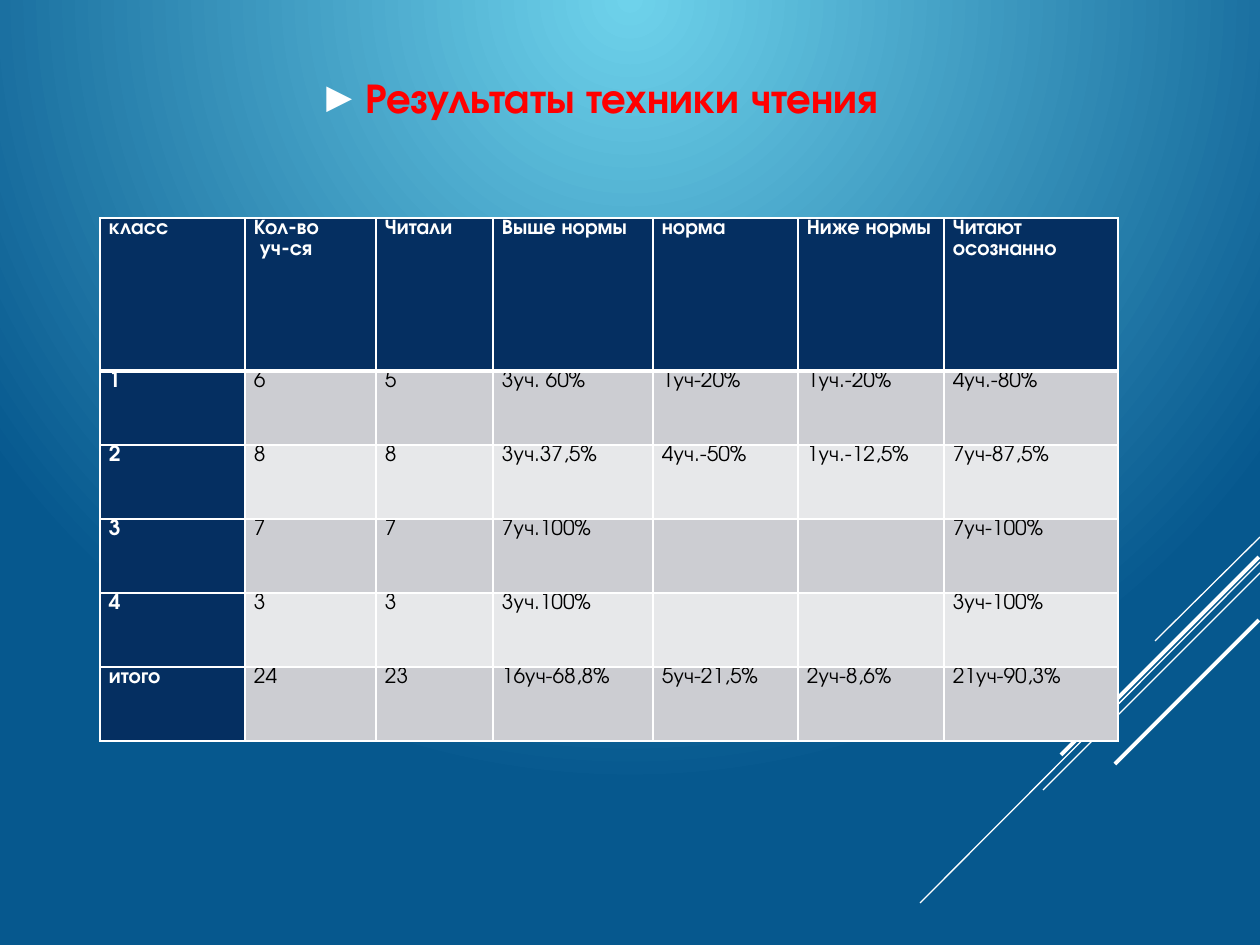
from typing import NamedTuple

from lxml.etree import SubElement
from pptx import Presentation
from pptx.dml.color import RGBColor
from pptx.enum.shapes import MSO_CONNECTOR
from pptx.enum.text import MSO_ANCHOR, PP_ALIGN
from pptx.oxml.ns import qn
from pptx.util import Emu, Pt

FONT = "TeX Gyre Adventor"
WHITE = RGBColor(0xFF, 0xFF, 0xFF)
BLACK = RGBColor(0x00, 0x00, 0x00)
RED = RGBColor(0xFF, 0x00, 0x00)
NAVY = RGBColor(0x05, 0x2F, 0x61)
GREY = RGBColor(0xCC, 0xCD, 0xD2)
PALE = RGBColor(0xE7, 0xE8, 0xEA)
SKY = RGBColor(0x6E, 0xD2, 0xEB)
BLUE = RGBColor(0x06, 0x58, 0x8E)


class Stripe(NamedTuple):
    right: int
    top: int
    left: int
    bottom: int
    weight: float


STRIPES = [
    Stripe(1260, 537, 1155, 641, 0.75),
    Stripe(1260, 562, 920, 903, 0.75),
    Stripe(1260, 573, 1043, 790, 0.75),
    Stripe(1259, 557, 1061, 755, 2.25),
    Stripe(1259, 620, 1115, 764, 2.25),
]

WIDTHS = [145, 131, 117, 160, 145, 146, 174]
HEIGHTS = [153] + [74] * 5
ROWS = [
    ["класс", "Кол-во\n уч-ся", "Читали", "Выше нормы", "норма", "Ниже нормы", "Читают осознанно"],
    ["1", "6", "5", "3уч. 60%", "1уч-20%", "1уч.-20%", "4уч.-80%"],
    ["2", "8", "8", "3уч.37,5%", "4уч.-50%", "1уч.-12,5%", "7уч-87,5%"],
    ["3", "7", "7", "7уч.100%", "", "", "7уч-100%"],
    ["4", "3", "3", "3уч.100%", "", "", "3уч-100%"],
    ["итого", "24", "23", "16уч-68,8%", "5уч-21,5%", "2уч-8,6%", "21уч-90,3%"],
]


def px(count: int) -> Emu:
    return Emu(round(count * 914400 / 126))


def write(frame, words: str, *, size: int, color: RGBColor, bold: bool = False,
          align=PP_ALIGN.JUSTIFY, spacing: float = 1.0) -> None:
    for index, line in enumerate(words.split("\n")):
        para = frame.add_paragraph() if index else frame.paragraphs[0]
        para.alignment = align
        para.line_spacing = spacing
        font = para.font
        if line:
            run = para.add_run()
            run.text = line
            font = run.font
        font.name = FONT
        font.size = Pt(size)
        font.bold = bold
        font.color.rgb = color


def paint(slide) -> None:
    fill = slide.background.fill
    fill.gradient()
    for stop, color, place in zip(fill.gradient_stops, (SKY, BLUE), (0, 1)):
        stop.color.rgb = color
        stop.position = place
    grad = next(slide.element.iter(qn("a:gradFill")))
    grad.remove(grad.find(qn("a:lin")))
    circle = SubElement(grad, qn("a:path"), path="circle")
    SubElement(circle, qn("a:fillToRect"), l="0", t="0", r="0", b="100000")


def streak(slide, stripe: Stripe) -> None:
    line = slide.shapes.add_connector(
        MSO_CONNECTOR.STRAIGHT, px(stripe.right), px(stripe.top),
        px(stripe.left), px(stripe.bottom))
    line.line.color.rgb = WHITE
    line.line.width = Pt(stripe.weight)
    SubElement(line.element.spPr, qn("a:effectLst"))


def title(slide) -> None:
    frame = slide.shapes.add_textbox(px(100), px(42), px(1005), px(100)).text_frame
    frame.word_wrap = True
    frame.vertical_anchor = MSO_ANCHOR.MIDDLE
    frame.margin_top, frame.margin_bottom = px(10), 0
    write(frame, "Результаты техники чтения", size=24, color=RED, bold=True,
          align=PP_ALIGN.CENTER)
    props = frame.paragraphs[0]._p.get_or_add_pPr()
    props.set("marL", str(px(39)))
    props.set("indent", str(-px(39)))
    tint = SubElement(props, qn("a:buClr"))
    SubElement(tint, qn("a:srgbClr"), val=str(WHITE))
    SubElement(props, qn("a:buSzPct"), val="80000")
    SubElement(props, qn("a:buFont"), typeface="DejaVu Sans")
    SubElement(props, qn("a:buChar"), char="▶")


def edge(cell, side: str, weight: int) -> None:
    props = cell._tc.get_or_add_tcPr()
    line = SubElement(props, qn(f"a:ln{side}"), w=str(Pt(weight)))
    solid = SubElement(line, qn("a:solidFill"))
    SubElement(solid, qn("a:srgbClr"), val=str(WHITE))


def grid(slide) -> None:
    table = slide.shapes.add_table(
        len(ROWS), len(WIDTHS), px(100), px(218),
        px(sum(WIDTHS)), px(sum(HEIGHTS))).table
    table.first_row = table.horz_banding = False
    for column, width in zip(table.columns, WIDTHS):
        column.width = px(width)
    for y, (row, height, words) in enumerate(zip(table.rows, HEIGHTS, ROWS)):
        row.height = px(height)
        for x, (cell, text) in enumerate(zip(row.cells, words)):
            head = x == 0 or y == 0
            cell.margin_left = cell.margin_right = px(9)
            cell.margin_top = cell.margin_bottom = 0
            for side in "LRTB":
                thick = (side, y) in (("B", 0), ("T", 1))
                edge(cell, side, 3 if thick else 1)
            cell.fill.solid()
            cell.fill.fore_color.rgb = NAVY if head else GREY if y % 2 else PALE
            write(cell.text_frame, text, size=12, bold=head, spacing=1.07,
                  color=WHITE if head else BLACK)


def main() -> None:
    deck = Presentation()
    deck.slide_width, deck.slide_height = px(1260), px(945)
    slide = deck.slides.add_slide(deck.slide_layouts[6])
    paint(slide)
    for stripe in STRIPES:
        streak(slide, stripe)
    title(slide)
    grid(slide)
    deck.save("out.pptx")


if __name__ == "__main__":
    main()
